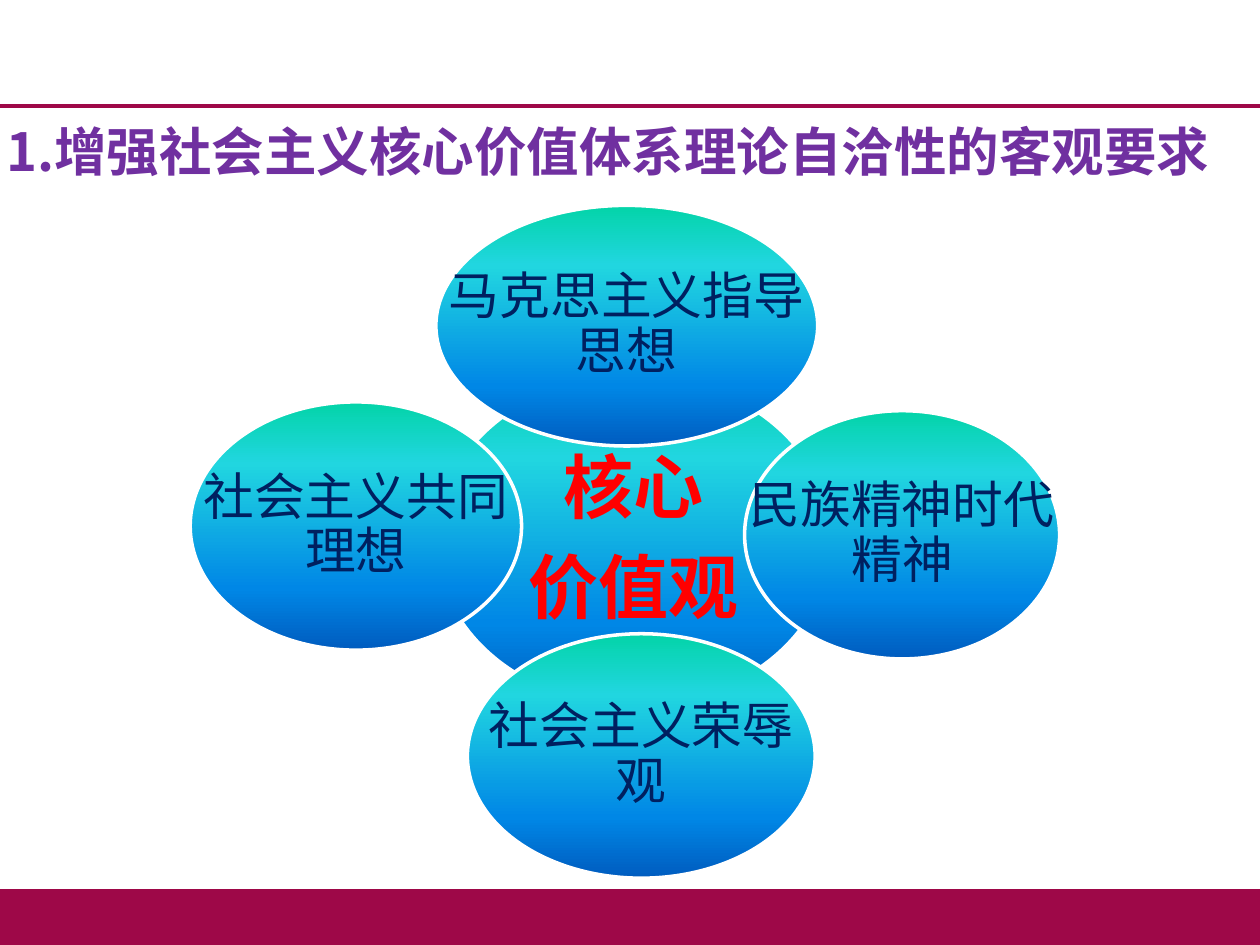
from copy import deepcopy

from lxml import etree
from pptx import Presentation, util as u
from pptx.dml.color import RGBColor
from pptx.enum import shapes, text
from pptx.oxml.ns import qn

WIDTH, HEIGHT = 10, 7.5
COLORS = {"band": "9E0848", "title": "7030A0", "core": "FF0000",
          "label": "002060", "outline": "FFFFFF"}
GRADIENT = [(0, "03D4A8"), (0.25, "21D6E0"), (0.75, "0087E6"), (1, "005CBF")]
CJK, LATIN = "Noto Sans CJK SC", "Calibri"


class SlideBuilder:
    """Holds the style and the current slide; boxes are shares of the slide."""

    def __init__(self, presentation):
        self.presentation = presentation
        self.slide = presentation.slides.add_slide(presentation.slide_layouts[5])

    def place(self, left, top, width, height):
        across, down = self.presentation.slide_width, self.presentation.slide_height
        return [int(left * across), int(top * down),
                int(width * across), int(height * down)]

    def color(self, name):
        return RGBColor.from_string(COLORS[name])

    def style(self, paragraph, size, color, font, bold=False):
        paragraph.alignment = text.PP_ALIGN.CENTER
        paragraph.font.size = u.Pt(size)
        paragraph.font.bold = bold
        paragraph.font.color.rgb = self.color(color)
        paragraph.font.name = font
        properties = paragraph.font._element
        etree.SubElement(properties, qn("a:ea")).set("typeface", font)

    def title(self, words, box):
        title = self.slide.shapes.title
        title.left, title.top, title.width, title.height = self.place(*box)
        frame = title.text_frame
        frame.text = words
        frame.word_wrap = True
        frame.auto_size = text.MSO_AUTO_SIZE.NONE
        frame.vertical_anchor = text.MSO_ANCHOR.MIDDLE
        self.style(frame.paragraphs[0], 30, "title", CJK, True)

    def rule(self, top):
        left, y, width, _ = self.place(0, top, 1, 0)
        line = self.slide.shapes.add_connector(
            shapes.MSO_CONNECTOR.STRAIGHT, left, y, left + width, y)
        line.line.color.rgb = self.color("band")
        line.line.width = u.Pt(2.25)
        etree.SubElement(line._element.spPr, qn("a:effectLst"))

    def shape(self, kind, box, outline, width):
        shape = self.slide.shapes.add_shape(kind, *self.place(*box))
        shape.shadow.inherit = False
        shape.line.color.rgb = self.color(outline)
        shape.line.width = u.Pt(width)
        return shape

    def band(self, box):
        band = self.shape(shapes.MSO_SHAPE.RECTANGLE, box, "band", 1)
        band.fill.solid()
        band.fill.fore_color.rgb = self.color("band")

    def ellipse(self, box):
        fill = self.shape(shapes.MSO_SHAPE.OVAL, box, "outline", 2).fill
        fill.gradient()
        fill.gradient_angle = 270
        first = fill.gradient_stops[0]._gs
        for _ in GRADIENT[2:]:
            first.addnext(deepcopy(first))
        for stop, (position, color) in zip(fill.gradient_stops, GRADIENT):
            stop.position = position
            stop.color.rgb = RGBColor.from_string(color)

    def label(self, lines, box, inset, *style):
        frame = self.slide.shapes.add_textbox(*self.place(*box)).text_frame
        frame.word_wrap = True
        frame.vertical_anchor = text.MSO_ANCHOR.MIDDLE
        frame.margin_left = frame.margin_right = u.Inches(inset)
        frame.margin_top = frame.margin_bottom = u.Inches(inset)
        frame.text = "\n".join(lines)
        for paragraph in frame.paragraphs:
            paragraph.line_spacing = 0.9
            paragraph.space_after = u.Pt(0)
            # Spacing as a share of the text size
            spacing = paragraph._p.pPr.find(qn("a:spcAft"))
            spacing.remove(spacing[0])
            etree.SubElement(spacing, qn("a:spcPct")).set("val", "35000")
            self.style(paragraph, *style)


def share(left, top, width, height):
    """Turn inches into shares of the slide."""
    return left / WIDTH, top / HEIGHT, width / WIDTH, height / HEIGHT


def main():
    presentation = Presentation()
    presentation.slide_width = u.Inches(WIDTH)
    presentation.slide_height = u.Inches(HEIGHT)
    builder = SlideBuilder(presentation)

    # Frame and title
    builder.rule(0.84 / HEIGHT)
    builder.band(share(0, 7.06, 10, 0.44))
    builder.title("1.增强社会主义核心价值体系理论自洽性的客观要求",
                  share(-0.35, 0.84, 10.35, 0.71))

    # Core circle
    core = share(3.46, 2.98, 3.14, 2.62)
    builder.ellipse(core)
    builder.label(["核心", "价值观"], core, 0.06, 40, "core", CJK, True)

    # Surrounding ellipses: top, right, bottom, left
    petals = [
        ("马克思主义指导思想", share(3.46, 1.63, 3.03, 1.91)),
        ("民族精神时代精神", share(5.91, 3.26, 2.5, 1.97)),
        ("社会主义荣辱观", share(3.71, 5.03, 2.76, 1.94)),
        ("社会主义共同理想", share(1.51, 3.19, 2.63, 1.97)),
    ]
    for words, box in petals:
        builder.ellipse(box)
        builder.label([words], box, 0.04, 29, "label", LATIN)

    presentation.save("out.pptx")


if __name__ == "__main__":
    main()
